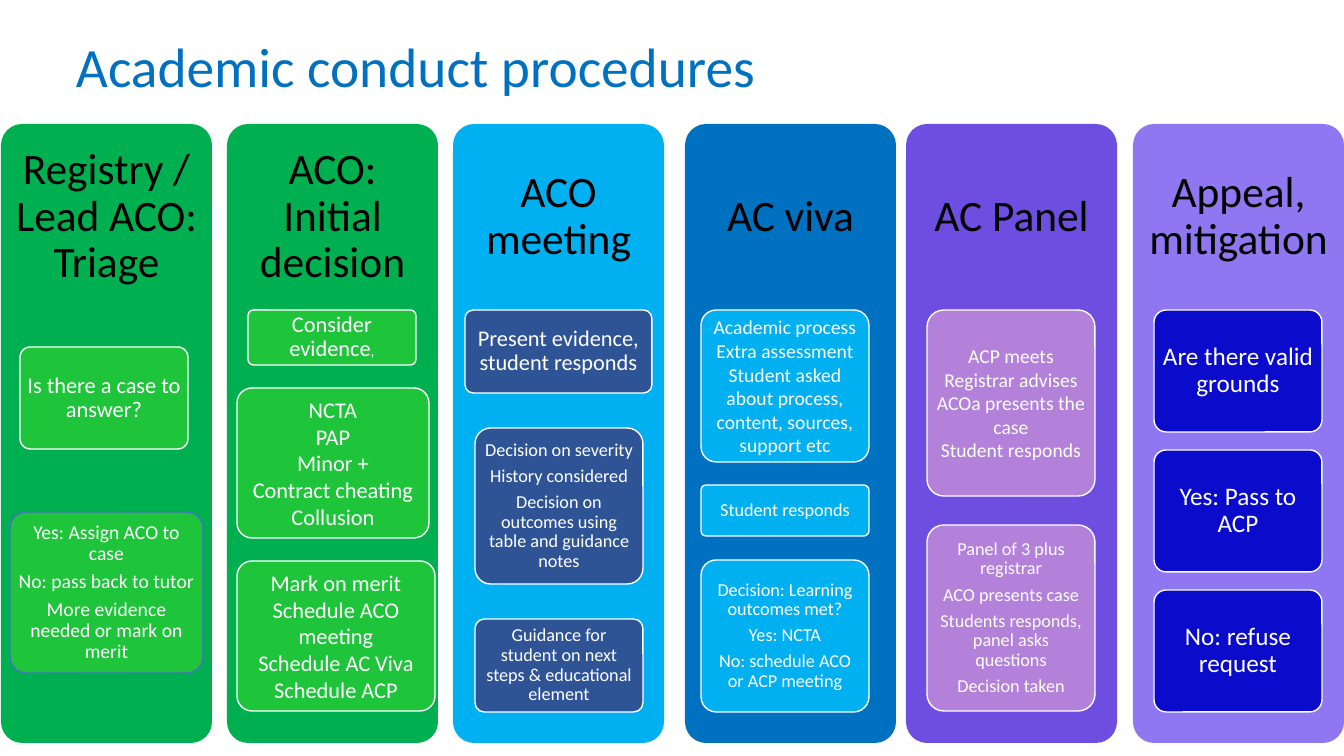
from pptx import Presentation
from pptx import util as u
from pptx.dml.color import RGBColor
from pptx.enum import shapes, text

PX = 914400 / 100.8  # EMU per pixel
FONT = "Calibri"
COLORS = {
    "title": "0070C0", "heading": "000000", "white": "FFFFFF", "outline": "4472C4",
    "green": "00B050", "lime": "1EC43A", "sky": "00B0F0", "navy": "2F5496",
    "blue": "0070C0", "violet": "6D4EE0", "mauve": "B381D9",
    "lavender": "8E77F1", "royal": "0B0BCB",
}
TIGHT, LOOSE = 0.9, 1.0  # line spacing
COLUMN_TOP, COLUMN_WIDTH, COLUMN_HEIGHT = 124, 211, 619


def write(shape, lines, size, color, spacing, insets, align=text.PP_ALIGN.CENTER):
    """Fill a shape with evenly styled paragraphs; insets are left, top, right, bottom."""
    frame = shape.text_frame
    frame.word_wrap = True
    frame.auto_size = text.MSO_AUTO_SIZE.NONE
    frame.vertical_anchor = text.MSO_ANCHOR.MIDDLE
    (frame.margin_left, frame.margin_top,
     frame.margin_right, frame.margin_bottom) = [round(inset * PX) for inset in insets]
    frame.text = "\n".join(lines)
    for index, paragraph in enumerate(frame.paragraphs):
        paragraph.alignment = align
        paragraph.line_spacing = spacing
        gap = size * 0.35 if index and spacing == TIGHT else 0
        paragraph.space_before = u.Pt(gap)
        for run in paragraph.runs:
            run.font.name = FONT
            run.font.size = u.Pt(size)
            run.font.color.rgb = RGBColor.from_string(COLORS[color])


def add_panel(left, top, width, height, fill, line=None):
    """Add a rounded rectangle with an optional thin outline."""
    box = [round(length * PX) for length in (left, top, width, height)]
    panel = slide.shapes.add_shape(shapes.MSO_SHAPE.ROUNDED_RECTANGLE, *box)
    panel.adjustments[0] = 0.1
    panel.shadow.inherit = False
    panel.fill.solid()
    panel.fill.fore_color.rgb = RGBColor.from_string(COLORS[fill])
    if line:
        panel.line.color.rgb = RGBColor.from_string(COLORS[line])
        panel.line.width = u.Pt(1)
    else:
        panel.line.fill.background()
    return panel


presentation = Presentation()
presentation.slide_width = round(1344 * PX)
presentation.slide_height = round(756 * PX)
slide = presentation.slides.add_slide(presentation.slide_layouts[5])

# Title
title = slide.shapes.title
title.left, title.top, title.width, title.height = [
    round(length * PX) for length in (66, 40, 755, 59)]
write(title, ["Academic conduct procedures"], 39.6, "title", TIGHT,
      (10, 5, 10, 5), text.PP_ALIGN.LEFT)

# Columns: left, heading, column fill, step fill, steps
# Step: left, top, width, height, text size, line spacing, lines
columns = [
    (1, "Registry / Lead ACO: Triage", "green", "lime", [
        (20, 347, 168, 102, 16, TIGHT, ["Is there a case to answer?"]),
        (10, 512, 193, 161, 14, TIGHT, [
            "Yes: Assign ACO to case", "No: pass back to tutor",
            "More evidence needed or mark on merit"]),
    ]),
    (227, "ACO: Initial decision", "green", "lime", [
        (248, 310, 168, 55, 16, TIGHT, ["Consider evidence"]),
        (237, 388, 192, 150, 16, LOOSE, [
            "NCTA", "PAP", "Minor +", "Contract cheating", "Collusion"]),
        (237, 561, 198, 150, 16, LOOSE, [
            "Mark on merit", "Schedule ACO meeting", "Schedule AC Viva",
            "Schedule ACP"]),
    ]),
    (453, "ACO meeting", "sky", "navy", [
        (465, 310, 187, 83, 16, TIGHT, ["Present evidence, student responds"]),
        (475, 428, 168, 156, 13, TIGHT, [
            "Decision on severity", "History considered",
            "Decision on outcomes using table and guidance notes"]),
        (475, 619, 168, 93, 13, TIGHT, [
            "Guidance for student on next steps & educational element"]),
    ]),
    (685, "AC viva", "blue", "sky", [
        (701, 310, 168, 152, 14, LOOSE, [
            "Academic process", "Extra assessment",
            "Student asked about process, content, sources, support etc"]),
        (701, 485, 168, 51, 13, TIGHT, ["Student responds"]),
        (701, 560, 168, 152, 13, TIGHT, [
            "Decision: Learning outcomes met?", "Yes: NCTA",
            "No: schedule ACO or ACP meeting"]),
    ]),
    (906, "AC Panel", "violet", "mauve", [
        (927, 310, 168, 186, 14, LOOSE, [
            "ACP meets", "Registrar advises", "ACOa presents the case",
            "Student responds"]),
        (927, 525, 168, 186, 13, TIGHT, [
            "Panel of 3 plus registrar", "ACO presents case",
            "Students responds, panel asks questions", "Decision taken"]),
    ]),
    (1133, "Appeal, mitigation", "lavender", "royal", [
        (1154, 310, 168, 122, 18, TIGHT, ["Are there valid grounds"]),
        (1154, 450, 168, 122, 18, TIGHT, ["Yes: Pass to ACP"]),
        (1154, 590, 168, 122, 18, TIGHT, ["No: refuse request"]),
    ]),
]

for column_left, heading, column_fill, step_fill, steps in columns:
    # Heading sits in the top part of its column
    column = add_panel(column_left, COLUMN_TOP, COLUMN_WIDTH, COLUMN_HEIGHT, column_fill)
    write(column, [heading], 31, "heading", TIGHT, (7, 7, 7, 440))

    for left, top, width, height, size, spacing, lines in steps:
        assigns_officer = lines[0].startswith("Yes: Assign")
        step = add_panel(left, top, width, height, step_fill,
                         "outline" if assigns_officer else "white")
        write(step, lines, size, "white", spacing, (4, 3, 4, 3))

        # Smaller comma after the evidence step
        if lines == ["Consider evidence"]:
            comma = step.text_frame.paragraphs[0].add_run()
            comma.text = ","
            comma.font.name = FONT
            comma.font.size = u.Pt(11)
            comma.font.color.rgb = RGBColor.from_string(COLORS["white"])

presentation.save("out.pptx")
